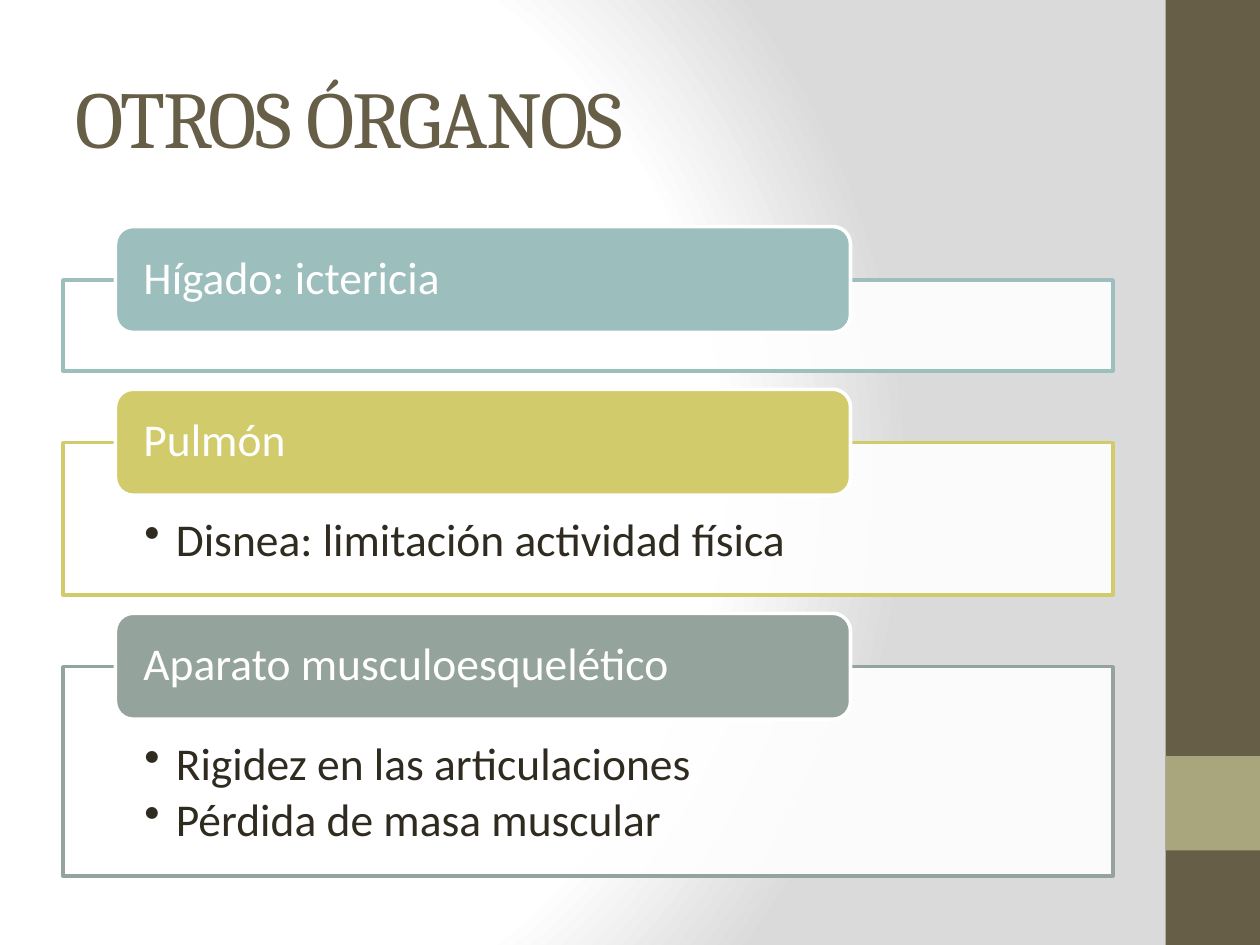
import pptx
import pptx.dml.color
import pptx.enum.shapes
import pptx.enum.text
import pptx.oxml
import pptx.oxml.ns
import pptx.util

Pt = pptx.util.Pt
SHAPES = pptx.enum.shapes.MSO_SHAPE
ANCHORS = pptx.enum.text.MSO_ANCHOR
qn = pptx.oxml.ns.qn

COLORS = {
    "brown": "675E47", "khaki": "A9A57C", "white": "FFFFFF", "gray": "DADADA",
    "ink": "2F2B20", "teal": "9CBEBD", "mustard": "D2CB6C", "sage": "95A39D",
}
SECTIONS = [
    ("Hígado: ictericia", [], "teal", 52),
    ("Pulmón", ["Disnea: limitación actividad física"], "mustard", 87),
    ("Aparato musculoesquelético",
     ["Rigidez en las articulaciones", "Pérdida de masa muscular"], "sage", 119.5),
]
CONTENT_LEFT, CONTENT_WIDTH = 36, 600
SECTION_TOP, SECTION_GAP = 160, 41
HEADER_INDENT, HEADER_WIDTH, HEADER_HEIGHT, HEADER_RISE = 30, 420, 60.5, 30.5


def rgb(name):
    return pptx.dml.color.RGBColor.from_string(COLORS[name])


def write_text(shape, lines, font="Calibri", size=26, color="ink", insets=(7.2, 3.6, 7.2, 3.6),
               anchor=ANCHORS.MIDDLE, line_spacing=None, space_after=0, tracking=0, bullet=False):
    """Fill a shape with one paragraph per line; insets run left, top, right, bottom."""
    frame = shape.text_frame
    frame.word_wrap = True
    frame.vertical_anchor = anchor
    frame.margin_left, frame.margin_top, frame.margin_right, frame.margin_bottom = map(Pt, insets)
    for index, line in enumerate(lines):
        paragraph = frame.add_paragraph() if index else frame.paragraphs[0]
        paragraph.alignment = pptx.enum.text.PP_ALIGN.LEFT
        paragraph.line_spacing = line_spacing
        paragraph.space_after = Pt(space_after)
        run = paragraph.add_run()
        run.text = line
        run.font.name = font
        run.font.size = Pt(size)
        run.font.color.rgb = rgb(color)
        if tracking:
            run.font._element.set("spc", str(tracking * 100))
        if bullet:
            properties = paragraph._p.get_or_add_pPr()
            properties.set("marL", str(Pt(18)))
            properties.set("indent", str(-Pt(18)))
            pptx.oxml.ns  # bullet is appended after the spacing elements
            properties.append(pptx.oxml.parse_xml(
                f'<a:buChar {pptx.oxml.ns.nsdecls("a")} char="•"/>'))


class SlideBuilder:
    def __init__(self, slide):
        self.slide = slide

    def background(self):
        """Circular gradient, white at its focus and gray at the right."""
        self.slide.background.fill.gradient()
        gradient = self.slide.element.find(".//" + qn("a:gradFill"))
        stops = "".join(
            f'<a:gs pos="{position * 1000}"><a:srgbClr val="{COLORS[color]}"/></a:gs>'
            for position, color in ((0, "white"), (75, "white"), (100, "gray")))
        gradient.getparent().replace(gradient, pptx.oxml.parse_xml(
            f'<a:gradFill {pptx.oxml.ns.nsdecls("a")} rotWithShape="1"><a:gsLst>{stops}</a:gsLst>'
            '<a:path path="circle"><a:fillToRect l="20000" t="50000" r="100000" b="50000"/>'
            '</a:path></a:gradFill>'))

    def box(self, left, top, width, height, fill, line=None, kind=SHAPES.RECTANGLE, opacity=100):
        shape = self.slide.shapes.add_shape(kind, Pt(left), Pt(top), Pt(width), Pt(height))
        shape.shadow.inherit = False
        shape.fill.solid()
        shape.fill.fore_color.rgb = rgb(fill)
        if opacity < 100:
            color = shape._element.spPr.find(qn("a:solidFill")).find(qn("a:srgbClr"))
            color.append(pptx.oxml.parse_xml(
                f'<a:alpha {pptx.oxml.ns.nsdecls("a")} val="{opacity * 1000}"/>'))
        if line:
            shape.line.color.rgb = rgb(line)
            shape.line.width = Pt(2)
        else:
            shape.line.fill.background()
        return shape

    def title(self, text):
        shape = self.slide.shapes.add_textbox(
            Pt(CONTENT_LEFT), Pt(21.6), Pt(CONTENT_WIDTH), Pt(90))
        write_text(shape, [text], font="Cambria", size=46, color="brown", tracking=-1)

    def section(self, top, height, heading, items, color):
        """Outlined panel with a rounded header overlapping its top edge."""
        panel = self.box(CONTENT_LEFT, top, CONTENT_WIDTH, height, "white", color, opacity=90)
        if items:
            write_text(panel, items, insets=(46.5, 42.5, 46.5, 14.5), anchor=ANCHORS.TOP,
                       line_spacing=0.9, space_after=4, bullet=True)
        header = self.box(CONTENT_LEFT + HEADER_INDENT, top - HEADER_RISE, HEADER_WIDTH,
                          HEADER_HEIGHT, color, "white", SHAPES.ROUNDED_RECTANGLE)
        write_text(header, [heading], color="white", insets=(13, 0, 13, 0), line_spacing=0.9)


def main():
    presentation = pptx.Presentation()
    presentation.slide_width, presentation.slide_height = Pt(720), Pt(540)
    builder = SlideBuilder(presentation.slides.add_slide(presentation.slide_layouts[6]))
    builder.background()
    builder.box(666, 0, 54, 540, "brown")
    builder.box(666, 432, 54, 54, "khaki")
    builder.title("OTROS ÓRGANOS")
    top = SECTION_TOP
    for heading, items, color, height in SECTIONS:
        builder.section(top, height, heading, items, color)
        top += height + SECTION_GAP
    presentation.save("out.pptx")


if __name__ == "__main__":
    main()
